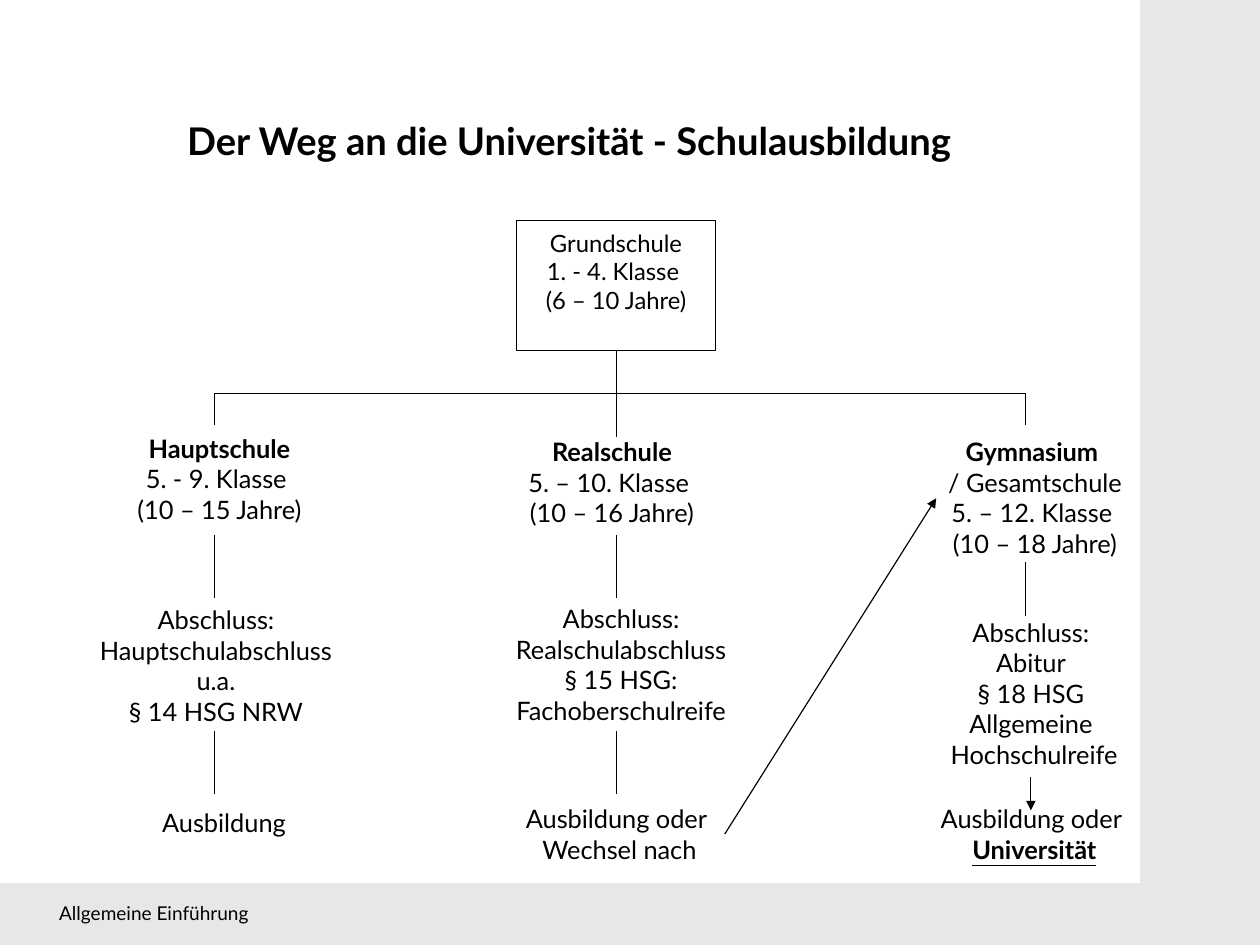
"""Draw the German school paths to university as a tree on one slide."""
from dataclasses import dataclass
from typing import Any, Optional

import lxml.etree
import pptx
import pptx.dml.color
import pptx.enum.shapes
import pptx.enum.text
import pptx.oxml.ns
import pptx.util

ALIGN = pptx.enum.text.PP_ALIGN
TOP, LEFT, BOTTOM, RIGHT = 0, 1, 2, 3


@dataclass(frozen=True)
class Theme:
    font: str = "Lato"
    ink: str = "000000"
    panel: str = "FFFFFF"
    background: str = "E7E7E7"
    title_size: float = 24
    body_size: float = 16
    root_size: float = 15
    footer_size: float = 12
    line_width: float = 0.75


@dataclass(frozen=True)
class Area:
    """Left, top, width and height in percent of the slide."""
    left: float
    top: float
    width: float
    height: float


@dataclass(frozen=True)
class TextLine:
    text: str
    bold: bool = False
    underline: bool = False
    same_paragraph: bool = False


@dataclass(frozen=True)
class Station:
    name: str
    area: Area
    lines: tuple[TextLine, ...]


@dataclass(frozen=True)
class Link:
    """A line between two points in percent, optionally joined to stations."""
    start: tuple[float, float]
    end: tuple[float, float]
    arrow: bool = False
    start_joint: Optional[tuple[str, int]] = None
    end_joint: Optional[tuple[str, int]] = None


THEME = Theme()
SLIDE_WIDTH = pptx.util.Cm(28)
SLIDE_HEIGHT = pptx.util.Cm(21)
PANEL = Area(0, 0, 90.5, 93.45)
TITLE = Area(13.95, 11.85, 64.5, 6.05)
ROOT = Area(41, 23.34, 15.8, 13.78)
FOOTER = Area(3.8, 94.8, 16.88, 3.63)
LEFT_X, MIDDLE_X, RIGHT_X = 17, ROOT.left + ROOT.width / 2, 81.4
BAR_Y, BRANCH_Y = 41.6, 45

ROOT_LINES = (TextLine("Grundschule"), TextLine("1. - 4. Klasse ", same_paragraph=True),
              TextLine("(6 – 10 Jahre)"))
STATIONS = (
    Station("Hauptschule", Area(8.44, 45.22, 17.97, 11), (
        TextLine("Hauptschule", bold=True), TextLine("5. - 9. Klasse ", same_paragraph=True),
        TextLine("(10 – 15 Jahre)"))),
    Station("Hauptschulabschluss", Area(6.71, 63.36, 20.86, 14.27), (
        TextLine("Abschluss:"), TextLine("Hauptschulabschluss"), TextLine("u.a."),
        TextLine("§ 14 HSG NRW"))),
    Station("Ausbildung", Area(11.88, 84.76, 11.8, 4.47), (TextLine("Ausbildung"),)),
    Station("Realschule", Area(41, 45.59, 15.15, 11), (
        TextLine("Realschule", bold=True), TextLine("5. – 10. Klasse ", same_paragraph=True),
        TextLine("(10 – 16 Jahre)"))),
    Station("Realschulabschluss", Area(39.55, 63.24, 19.5, 20.8), (
        TextLine("Abschluss:"), TextLine("Realschulabschluss"), TextLine("§ 15 HSG:"),
        TextLine("Fachoberschulreife"))),
    Station("Wechsel", Area(40.82, 84.4, 16.7, 7.74), (
        TextLine("Ausbildung oder "), TextLine("Wechsel nach"))),
    Station("Gymnasium", Area(74.3, 45.59, 15.7, 14.27), (
        TextLine("Gymnasium ", bold=True), TextLine("/ Gesamtschule"),
        TextLine("5. – 12. Klasse "), TextLine("(10 – 18 Jahre)"))),
    Station("Abitur", Area(74.02, 64.69, 15.6, 17.53), (
        TextLine("Abschluss:"), TextLine("Abitur"), TextLine("§ 18 HSG"),
        TextLine("Allgemeine"), TextLine(" Hochschulreife"))),
    Station("Universität", Area(73.75, 84.4, 16.7, 7.74), (
        TextLine("Ausbildung oder "), TextLine("Universität", bold=True, underline=True))),
)
LINKS = (
    Link((MIDDLE_X, 37.12), (MIDDLE_X, 46.2), start_joint=("Grundschule", BOTTOM)),
    Link((LEFT_X, BAR_Y), (RIGHT_X, BAR_Y)),
    *(Link((x, BAR_Y), (x, BRANCH_Y)) for x in (LEFT_X, RIGHT_X)),
    *(Link((x, top), (x, top + 6.65)) for x in (LEFT_X, MIDDLE_X) for top in (56.6, 77.4)),
    Link((RIGHT_X, 59.5), (RIGHT_X, 65.2)),
    Link((81.82, 82.22), (81.82, 85.75), arrow=True, start_joint=("Abitur", BOTTOM)),
    Link((57.52, 88.27), (74.3, 52.72), arrow=True,
         start_joint=("Wechsel", RIGHT), end_joint=("Gymnasium", LEFT)),
)


def across(share: float) -> int:
    return round(SLIDE_WIDTH * share / 100)


def down(share: float) -> int:
    return round(SLIDE_HEIGHT * share / 100)


def bounds(area: Area) -> tuple[int, int, int, int]:
    return across(area.left), down(area.top), across(area.width), down(area.height)


def color(value: str) -> pptx.dml.color.RGBColor:
    return pptx.dml.color.RGBColor.from_string(value)


def apply(target: Any, values: dict[str, Any]) -> None:
    for name, value in values.items():
        setattr(target, name, value)


def write_text(shape: Any, lines: tuple[TextLine, ...], size: float, alignment: Any,
               top_margin: float = 0.6) -> None:
    frame = shape.text_frame
    apply(frame, {"word_wrap": False, "auto_size": pptx.enum.text.MSO_AUTO_SIZE.NONE,
                  "vertical_anchor": pptx.enum.text.MSO_ANCHOR.TOP,
                  "margin_left": across(0.9), "margin_right": across(0.9),
                  "margin_top": down(top_margin), "margin_bottom": down(0.6)})
    paragraph = frame.paragraphs[0]
    for index, line in enumerate(lines):
        if line.same_paragraph:
            paragraph.add_line_break()
        elif index:
            paragraph = frame.add_paragraph()
        paragraph.alignment = alignment
        run = paragraph.add_run()
        run.text = line.text
        apply(run.font, {"name": THEME.font, "size": pptx.util.Pt(size),
                         "bold": line.bold, "underline": line.underline})
        run.font.color.rgb = color(THEME.ink)


def draw_text(slide: Any, area: Area, lines: tuple[TextLine, ...], size: float, alignment: Any) -> Any:
    shape = slide.shapes.add_textbox(*bounds(area))
    write_text(shape, lines, size, alignment)
    return shape


def draw_rectangle(slide: Any, area: Area) -> Any:
    shape = slide.shapes.add_shape(pptx.enum.shapes.MSO_SHAPE.RECTANGLE, *bounds(area))
    shape.shadow.inherit = False
    shape.fill.solid()
    shape.fill.fore_color.rgb = color(THEME.panel)
    return shape


def draw_link(slide: Any, link: Link, stations: dict[str, Any]) -> None:
    connector = slide.shapes.add_connector(
        pptx.enum.shapes.MSO_CONNECTOR.STRAIGHT,
        across(link.start[0]), down(link.start[1]), across(link.end[0]), down(link.end[1]))
    for joint, connect in ((link.start_joint, connector.begin_connect),
                           (link.end_joint, connector.end_connect)):
        if joint:
            connect(stations[joint[0]], joint[1])
    connector.line.color.rgb = color(THEME.ink)
    connector.line.width = pptx.util.Pt(THEME.line_width)
    properties = connector.line._get_or_add_ln()
    if link.arrow:
        lxml.etree.SubElement(properties, pptx.oxml.ns.qn("a:tailEnd"), type="triangle")
    lxml.etree.SubElement(properties.getparent(), pptx.oxml.ns.qn("a:effectLst"))


def main() -> None:
    presentation = pptx.Presentation()
    apply(presentation, {"slide_width": SLIDE_WIDTH, "slide_height": SLIDE_HEIGHT})
    slide = presentation.slides.add_slide(presentation.slide_layouts.get_by_name("Title Only"))
    slide.background.fill.solid()
    slide.background.fill.fore_color.rgb = color(THEME.background)
    title = slide.shapes.title
    apply(title, dict(zip(("left", "top", "width", "height"), bounds(TITLE))))
    write_text(title, (TextLine("Der Weg an die Universität - Schulausbildung", bold=True),),
               THEME.title_size, ALIGN.LEFT)
    panel = draw_rectangle(slide, PANEL)
    panel.line.fill.background()
    title.element.addprevious(panel.element)
    root = draw_rectangle(slide, ROOT)
    root.line.color.rgb = color(THEME.ink)
    root.line.width = pptx.util.Pt(THEME.line_width)
    write_text(root, ROOT_LINES, THEME.root_size, ALIGN.CENTER, top_margin=0.85)
    stations = {"Grundschule": root}
    for station in STATIONS:
        stations[station.name] = draw_text(slide, station.area, station.lines, THEME.body_size, ALIGN.CENTER)
    for link in LINKS:
        draw_link(slide, link, stations)
    draw_text(slide, FOOTER, (TextLine("Allgemeine Einführung"),), THEME.footer_size, ALIGN.LEFT)
    presentation.save("out.pptx")


if __name__ == "__main__":
    main()
